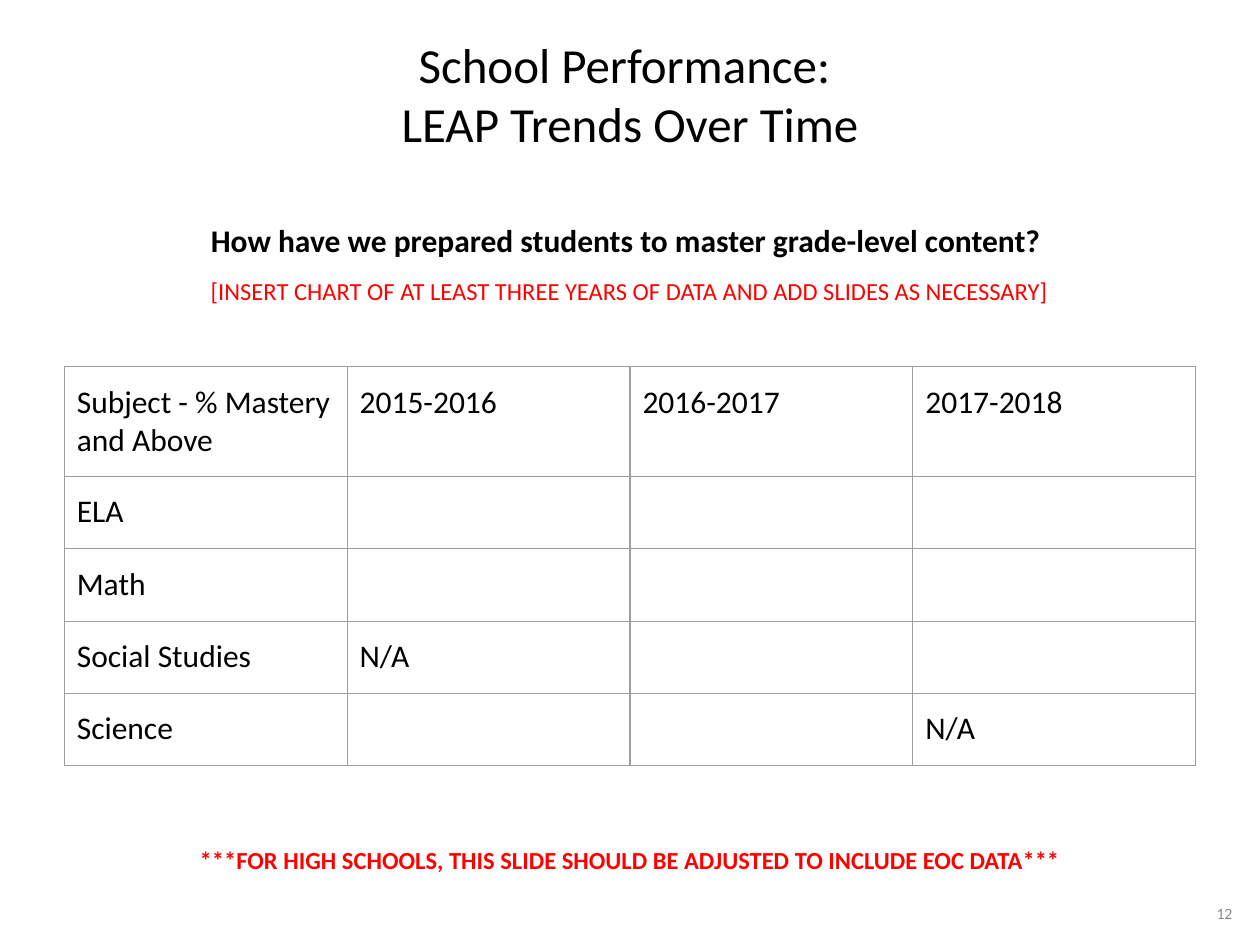
import pptx
import pptx.dml.color
import pptx.enum.text
import pptx.oxml
import pptx.oxml.ns
import pptx.util

Inches = pptx.util.Inches
RGBColor = pptx.dml.color.RGBColor
Align = pptx.enum.text.PP_ALIGN
Anchor = pptx.enum.text.MSO_ANCHOR

BLACK = RGBColor(0x00, 0x00, 0x00)
RED = RGBColor(0xFF, 0x00, 0x00)
GRAY = RGBColor(0x8A, 0x8A, 0x8A)
BORDER_GRAY = RGBColor(0x9E, 0x9E, 0x9E)
FONT = "Calibri"

MASTERY_ROWS = [
    ["Subject - % Mastery and Above", "2015-2016", "2016-2017", "2017-2018"],
    ["ELA", "", "", ""],
    ["Math", "", "", ""],
    ["Social Studies", "N/A", "", ""],
    ["Science", "", "", "N/A"],
]


def write_text(paragraph, text, size=18, color=BLACK, bold=False,
               alignment=Align.LEFT, space_before=0):
    paragraph.alignment = alignment
    paragraph.space_before = pptx.util.Pt(space_before)
    paragraph.font.size = pptx.util.Pt(size)
    if text:
        run = paragraph.add_run()
        run.text = text
        run.font.name = FONT
        run.font.size = pptx.util.Pt(size)
        run.font.bold = bold
        run.font.color.rgb = color


def add_text_box(slide, left, top, width, height, lines,
                 anchor=Anchor.TOP, vertical_inset=0.1):
    shape = slide.shapes.add_textbox(
        Inches(left), Inches(top), Inches(width), Inches(height))
    frame = shape.text_frame
    frame.word_wrap = True
    frame.vertical_anchor = anchor
    frame.margin_left = frame.margin_right = Inches(0.1)
    frame.margin_top = frame.margin_bottom = Inches(vertical_inset)
    for index, (text, text_format) in enumerate(lines):
        paragraph = frame.add_paragraph() if index else frame.paragraphs[0]
        write_text(paragraph, text, **text_format)


def set_cell_borders(cell):
    properties = cell._tc.get_or_add_tcPr()
    for index, side in enumerate(("lnL", "lnR", "lnT", "lnB")):
        border = pptx.oxml.parse_xml(
            f'<a:{side} {pptx.oxml.ns.nsdecls("a")} w="{pptx.util.Pt(0.75)}">'
            f'<a:solidFill><a:srgbClr val="{BORDER_GRAY}"/></a:solidFill>'
            f'</a:{side}>')
        properties.insert(index, border)


def add_mastery_table(slide, left, top, column_width, header_height, row_height):
    row_count, column_count = len(MASTERY_ROWS), len(MASTERY_ROWS[0])
    height = header_height + row_height * (row_count - 1)
    table = slide.shapes.add_table(
        row_count, column_count, Inches(left), Inches(top),
        Inches(column_width * column_count), Inches(height)).table
    table.first_row = False
    table.horz_banding = False
    for column in table.columns:
        column.width = Inches(column_width)
    for row_index, values in enumerate(MASTERY_ROWS):
        row = table.rows[row_index]
        row.height = Inches(row_height if row_index else header_height)
        for cell, value in zip(row.cells, values):
            cell.margin_left = cell.margin_right = Inches(0.1)
            cell.margin_top = cell.margin_bottom = Inches(0.13)
            cell.fill.background()
            set_cell_borders(cell)
            write_text(cell.text_frame.paragraphs[0], value)


def main():
    presentation = pptx.Presentation()
    presentation.slide_width = Inches(10)
    presentation.slide_height = Inches(7.5)
    slide = presentation.slides.add_slide(presentation.slide_layouts[6])

    title_format = dict(size=28, alignment=Align.CENTER)
    add_text_box(slide, 0, -0.02, 10, 1.53, [
        ("School Performance: ", title_format),
        ("LEAP Trends Over Time", title_format),
    ], anchor=Anchor.MIDDLE)
    add_mastery_table(slide, 0.51, 2.91, 2.245, 0.87, 0.575)
    add_text_box(slide, 0.2, 1.65, 9.59, 1.72, [
        ("How have we prepared students to master grade-level content? ",
         dict(bold=True, alignment=Align.CENTER)),
        ("[INSERT CHART OF AT LEAST THREE YEARS OF DATA AND ADD SLIDES AS NECESSARY]",
         dict(size=14, color=RED, alignment=Align.CENTER, space_before=10)),
    ])
    add_text_box(slide, 0.64, 6.61, 8.72, 0.57, [
        ("***FOR HIGH SCHOOLS, THIS SLIDE SHOULD BE ADJUSTED TO INCLUDE EOC DATA***",
         dict(size=14, color=RED, bold=True, alignment=Align.CENTER)),
    ])
    add_text_box(slide, 7.44, 7, 2.44, 0.5, [
        ("12", dict(size=9, color=GRAY, alignment=Align.RIGHT)),
    ], anchor=Anchor.MIDDLE, vertical_inset=0.05)

    presentation.save("out.pptx")


if __name__ == "__main__":
    main()
